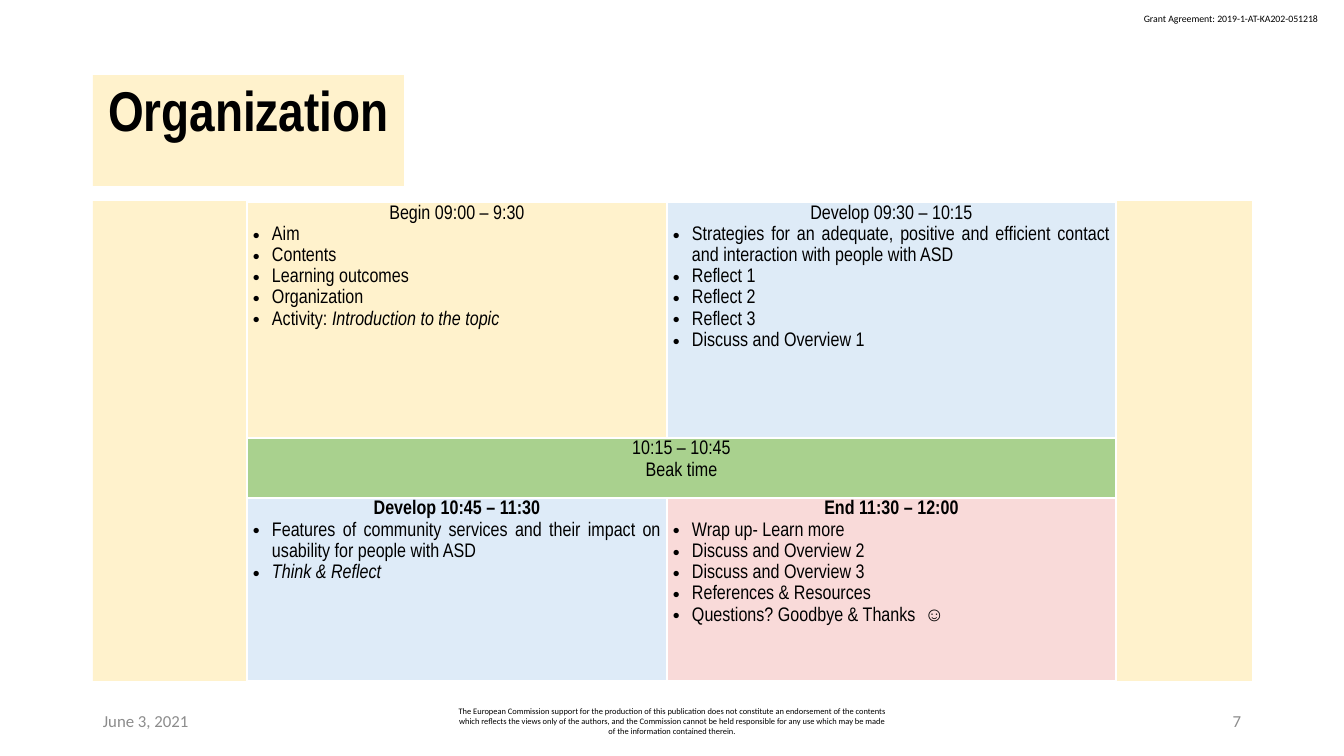
from pptx import Presentation
from pptx.dml.color import RGBColor
from pptx.enum.shapes import MSO_SHAPE
from pptx.enum.text import MSO_ANCHOR, MSO_AUTO_SIZE, PP_ALIGN
from pptx.oxml.ns import qn
from pptx.util import Emu, Pt
from lxml import etree

LEFT, CENTER, RIGHT, JUSTIFY = PP_ALIGN.LEFT, PP_ALIGN.CENTER, PP_ALIGN.RIGHT, PP_ALIGN.JUSTIFY
TOP, MIDDLE = MSO_ANCHOR.TOP, MSO_ANCHOR.MIDDLE
NO_FIT = MSO_AUTO_SIZE.NONE
RECTANGLE = MSO_SHAPE.RECTANGLE
TITLE_ONLY = 5

HEADING_FONT, FOOTER_FONT = "Arial Narrow", "Calibri"
BLACK, WHITE, GREY = "000000", "FFFFFF", "8C8C8C"
CREAM, BLUE, SKY, GREEN, PINK = "FFF2CC", "DEEBF7", "DEEBF8", "A9D18E", "F9DAD9"


def px(length):
    """Turn pixels into EMU."""
    return Emu(round(length * 914400 / 100.8))


def paint(fill, color):
    """Fill with a solid hex colour."""
    fill.solid()
    fill.fore_color.rgb = RGBColor.from_string(color)


def set_insets(holder, sides, ends):
    """Set the left and right, then the top and bottom insets."""
    holder.margin_left = holder.margin_right = px(sides)
    holder.margin_top = holder.margin_bottom = px(ends)


def write(frame, text, italic_end="", font=HEADING_FONT, size=14, color=BLACK,
          bold=False, align=LEFT, spacing=1.0, bullet=False, first=True):
    """Write one paragraph, with an optional italic ending."""
    paragraph = frame.paragraphs[0] if first else frame.add_paragraph()
    if bullet:
        properties = paragraph._p.get_or_add_pPr()
        properties.set("marL", str(px(19)))
        properties.set("indent", str(-px(19)))
        etree.SubElement(properties, qn("a:buFont")).set("typeface", "Arial")
        etree.SubElement(properties, qn("a:buChar")).set("char", "•")
    paragraph.alignment = align
    paragraph.line_spacing = spacing
    for words, italic in ((text, False), (italic_end, True)):
        if words:
            run = paragraph.add_run()
            run.text = words
            run.font.name = font
            run.font.size = Pt(size)
            run.font.bold = bold
            run.font.italic = italic
            run.font.color.rgb = RGBColor.from_string(color)


class Deck:
    """Hold the presentation, its slide and the table style."""

    def __init__(self):
        """Open a wide slide with the title-only layout."""
        self.presentation = Presentation()
        self.presentation.slide_width = px(1344)
        self.presentation.slide_height = px(756)
        self.slide = self.presentation.slides.add_slide(
            self.presentation.slide_layouts[TITLE_ONLY])
        self.border, self.border_width = WHITE, Pt(1)

    def title(self, text, left, top, width, height):
        """Place the filled title."""
        heading = self.slide.shapes.title
        heading.left, heading.top, heading.width, heading.height = map(
            px, (left, top, width, height))
        paint(heading.fill, CREAM)
        frame = heading.text_frame
        frame.auto_size = NO_FIT
        frame.word_wrap = True
        frame.vertical_anchor = TOP
        set_insets(frame, 13, 0)
        write(frame, text, size=40, bold=True, align=CENTER)

    def panel(self, left, top, width, height, color):
        """Add a plain rectangle."""
        rectangle = self.slide.shapes.add_shape(RECTANGLE, *map(px, (left, top, width, height)))
        rectangle.shadow.inherit = False
        paint(rectangle.fill, color)
        rectangle.line.fill.background()

    def label(self, text, left, top, width, height, wrap=True, anchor=MIDDLE, **style):
        """Add a small text in the margin of the slide."""
        box = self.slide.shapes.add_textbox(*map(px, (left, top, width, height)))
        frame = box.text_frame
        frame.word_wrap = wrap
        frame.vertical_anchor = anchor
        write(frame, text, font=FOOTER_FONT, **style)

    def cell(self, cell, color, heading=(), items=(), bold=False, align=LEFT):
        """Fill a table cell with centred headings and bulleted items."""
        set_insets(cell, 6, 0)
        properties = cell._tc.get_or_add_tcPr()
        for side in ("lnL", "lnR", "lnT", "lnB"):
            line = etree.SubElement(properties, qn("a:" + side), w=str(self.border_width))
            solid = etree.SubElement(line, qn("a:solidFill"))
            etree.SubElement(solid, qn("a:srgbClr")).set("val", self.border)
        paint(cell.fill, color)
        frame = cell.text_frame
        for number, text in enumerate(heading):
            write(frame, text, bold=bold, align=CENTER, spacing=1.15, first=number == 0)
        for text, italic_end in items:
            write(frame, text, italic_end, align=align, spacing=1.15, bullet=True, first=False)

    def table(self, left, top, widths, heights, cells):
        """Add the schedule, with a row of one cell spanning all columns."""
        schedule = self.slide.shapes.add_table(
            len(heights), len(widths),
            *map(px, (left, top, sum(widths), sum(heights)))).table
        schedule.first_row = schedule.horz_banding = False
        for column, width in zip(schedule.columns, widths):
            column.width = px(width)
        for row, height in zip(schedule.rows, heights):
            row.height = px(height)
        for row, contents in enumerate(cells):
            if len(contents) == 1:
                schedule.cell(row, 0).merge(schedule.cell(row, len(widths) - 1))
            for column, content in enumerate(contents):
                self.cell(schedule.cell(row, column), **content)


def plain(*texts):
    """List items without an italic ending."""
    return [(text, "") for text in texts]


def main():
    """Build the slide."""
    deck = Deck()
    deck.title("Organization", 93, 75, 311, 111)
    deck.label("Grant Agreement: 2019-1-AT-KA202-051218", 1134, 8, 199, 22,
               wrap=False, anchor=TOP, size=7)
    deck.label("June 3, 2021", 93, 701, 302, 40, size=12, color=GREY)
    deck.label("The European Commission support for the production of this publication does not "
               "constitute an endorsement of the contents which reflects the views only of the "
               "authors, and the Commission cannot be held responsible for any use which may be "
               "made of the information contained therein.",
               445, 701, 454, 40, size=6, align=CENTER)
    deck.label("7", 949, 701, 302, 40, size=12, color=GREY, align=RIGHT)
    deck.panel(93, 201, 1159, 480, CREAM)

    begin = dict(color=CREAM, heading=["Begin 09:00 – 9:30"],
                 items=plain("Aim", "Contents", "Learning outcomes", "Organization")
                 + [("Activity: ", "Introduction to the topic")])
    strategies = dict(color=BLUE, heading=["Develop 09:30 – 10:15"], align=JUSTIFY,
                      items=plain("Strategies for an adequate, positive and efficient contact "
                                  "and interaction with people with ASD", "Reflect 1",
                                  "Reflect 2", "Reflect 3", "Discuss and Overview 1"))
    pause = dict(color=GREEN, heading=["10:15 – 10:45", "Beak time"])
    features = dict(color=SKY, heading=["Develop 10:45 – 11:30"], bold=True, align=JUSTIFY,
                    items=plain("Features of community services and their impact on "
                                "usability for people with ASD") + [("", "Think & Reflect")])
    end = dict(color=PINK, heading=["End 11:30 – 12:00"], bold=True,
               items=plain("Wrap up- Learn more", "Discuss and Overview 2",
                           "Discuss and Overview 3", "References & Resources",
                           "Questions? Goodbye & Thanks  ☺"))
    deck.table(247, 202, [420, 449], [236, 60, 183],
               [[begin, strategies], [pause], [features, end]])
    deck.presentation.save("out.pptx")


if __name__ == "__main__":
    main()
